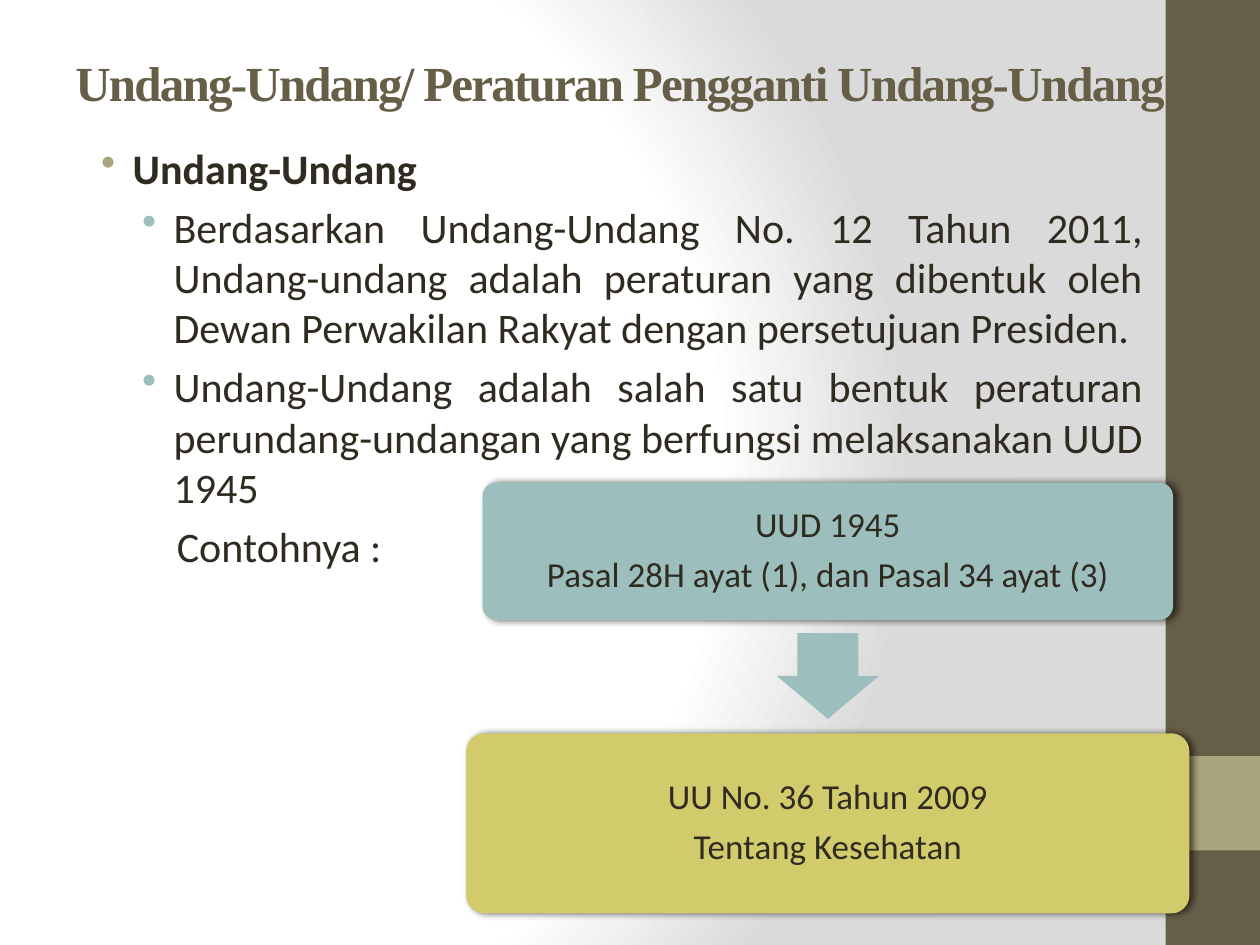
from dataclasses import dataclass

from lxml import etree
from pptx import Presentation
from pptx.dml.color import RGBColor
from pptx.enum.shapes import MSO_SHAPE
from pptx.enum.text import MSO_ANCHOR, PP_ALIGN
from pptx.oxml import parse_xml
from pptx.util import Pt

RECT, ROUND, ARROW = MSO_SHAPE.RECTANGLE, MSO_SHAPE.ROUNDED_RECTANGLE, MSO_SHAPE.RIGHT_ARROW
TOP, MIDDLE = MSO_ANCHOR.TOP, MSO_ANCHOR.MIDDLE
LEFT, CENTER, JUSTIFY = PP_ALIGN.LEFT, PP_ALIGN.CENTER, PP_ALIGN.JUSTIFY

BROWN = RGBColor(0x67, 0x5E, 0x47)
KHAKI = RGBColor(0xA9, 0xA5, 0x7C)
TEAL = RGBColor(0x9C, 0xBE, 0xBD)
LIME = RGBColor(0xD2, 0xCB, 0x6C)
INK = RGBColor(0x2F, 0x2B, 0x20)

SANS, SERIF = "Calibri", "Times New Roman"
URI = "http://schemas.openxmlformats.org/drawingml/2006/main"
NS = f'xmlns:a="{URI}"'
ROUNDING = 0.1

BACK = f"""<p:bg {NS} xmlns:p="http://schemas.openxmlformats.org/presentationml/2006/main">
<p:bgPr><a:gradFill rotWithShape="1"><a:gsLst>
<a:gs pos="0"><a:srgbClr val="FFFFFF"/></a:gs>
<a:gs pos="75000"><a:srgbClr val="FFFFFF"/></a:gs>
<a:gs pos="100000"><a:srgbClr val="DADADA"/></a:gs></a:gsLst>
<a:path path="circle"><a:fillToRect l="20000" t="50000" r="100000" b="50000"/></a:path>
</a:gradFill><a:effectLst/></p:bgPr></p:bg>"""

SHADOW = f"""<a:effectLst {NS}>
<a:outerShdw blurRad="{Pt(4)}" dist="{Pt(2)}" dir="0" rotWithShape="0">
<a:srgbClr val="000000"><a:alpha val="60000"/></a:srgbClr></a:outerShdw></a:effectLst>"""


@dataclass
class Box:
    x: float
    y: float
    w: float
    h: float

    def inset(self, gap: float) -> "Box":
        return Box(self.x + gap, self.y + gap, self.w - 2 * gap, self.h - 2 * gap)

    def place(self) -> tuple:
        return Pt(self.x), Pt(self.y), Pt(self.w), Pt(self.h)


@dataclass
class Line:
    text: str
    left: float = 0
    hang: float = 0
    dot: RGBColor | None = None
    bold: bool = False


@dataclass
class Card:
    box: Box
    fill: RGBColor
    lines: list[Line]


BODY = [
    Line("Undang-Undang", 27, 18, KHAKI, True),
    Line("Berdasarkan Undang-Undang No. 12 Tahun 2011, Undang-undang adalah "
         "peraturan yang dibentuk oleh Dewan Perwakilan Rakyat dengan "
         "persetujuan Presiden.", 50.4, 18, TEAL),
    Line("Undang-Undang adalah salah satu bentuk peraturan perundang-undangan "
         "yang berfungsi melaksanakan UUD 1945", 50.4, 18, TEAL),
    Line("Contohnya :", 52.2),
]
CARDS = [
    Card(Box(275.76, 275.76, 394.56, 78.48), TEAL,
         [Line("UUD 1945"), Line("Pasal 28H ayat (1), dan Pasal 34 ayat (3)")]),
    Card(Box(266.4, 419.04, 413.28, 102.96), LIME,
         [Line("UU No. 36 Tahun 2009"), Line("Tentang Kesehatan")]),
]


def add_form(slide, kind, box: Box, fill: RGBColor):
    form = slide.shapes.add_shape(kind, *box.place())
    form.shadow.inherit = False
    form.fill.solid()
    form.fill.fore_color.rgb = fill
    form.line.fill.background()
    return form


def add_text(slide, box: Box, lines: list[Line], *, size: float, font: str = SANS,
             color: RGBColor = INK, align=LEFT, anchor=TOP, pad: float | None = None,
             before: float = 0, after: float = 0, pitch: float = 1, track: float = 0) -> None:
    frame = slide.shapes.add_textbox(*box.place()).text_frame
    frame.word_wrap = True
    frame.vertical_anchor = anchor
    if pad is not None:
        frame.margin_left = frame.margin_right = Pt(pad)
        frame.margin_top = frame.margin_bottom = Pt(pad)
    for i, line in enumerate(lines):
        para = frame.add_paragraph() if i else frame.paragraphs[0]
        para.alignment = align
        para.space_before, para.space_after = Pt(before), Pt(after)
        para.line_spacing = pitch
        props = para._p.get_or_add_pPr()
        props.set("marL", str(Pt(line.left)))
        props.set("indent", str(Pt(-line.hang)))
        if line.dot is not None:
            tint = etree.SubElement(props, f"{{{URI}}}buClr")
            etree.SubElement(tint, f"{{{URI}}}srgbClr", val=str(line.dot))
            etree.SubElement(props, f"{{{URI}}}buChar", char="•")
        run = para.add_run()
        run.text = line.text
        run.font.name, run.font.size = font, Pt(size)
        run.font.bold = line.bold
        run.font.color.rgb = color
        if track:
            run._r.get_or_add_rPr().set("spc", str(round(track * 100)))


def add_card(slide, card: Card) -> None:
    form = add_form(slide, ROUND, card.box, card.fill)
    form.adjustments[0] = ROUNDING
    props = form._element.spPr
    props.replace(props.find(f"{{{URI}}}effectLst"), parse_xml(SHADOW))
    gap = 0.29 * ROUNDING * card.box.h
    add_text(slide, card.box.inset(gap), card.lines, size=20, align=CENTER,
             anchor=MIDDLE, pad=6, after=7, pitch=0.9)


def main() -> None:
    deck = Presentation()
    deck.slide_width, deck.slide_height = Pt(720), Pt(540)
    slide = deck.slides.add_slide(deck.slide_layouts[6])
    slide._element.cSld.insert(0, parse_xml(BACK))

    add_form(slide, RECT, Box(666, 0, 54, 540), BROWN)
    add_form(slide, RECT, Box(666, 432, 54, 54), KHAKI)
    add_text(slide, Box(36, 21.6, 653.76, 50.4),
             [Line("Undang-Undang/ Peraturan Pengganti Undang-Undang", bold=True)],
             size=28, font=SERIF, color=BROWN, anchor=MIDDLE, track=-1)
    add_text(slide, Box(41.76, 77.76, 618.48, 356.4), BODY,
             size=24, align=JUSTIFY, before=4.8)

    for card in CARDS:
        add_card(slide, card)
    arrow = add_form(slide, ARROW, Box(448.56, 357.12, 48.96, 58.32), TEAL)
    arrow.rotation = 90
    arrow.adjustments[0], arrow.adjustments[1] = 0.6, 0.5

    deck.save("out.pptx")


if __name__ == "__main__":
    main()
